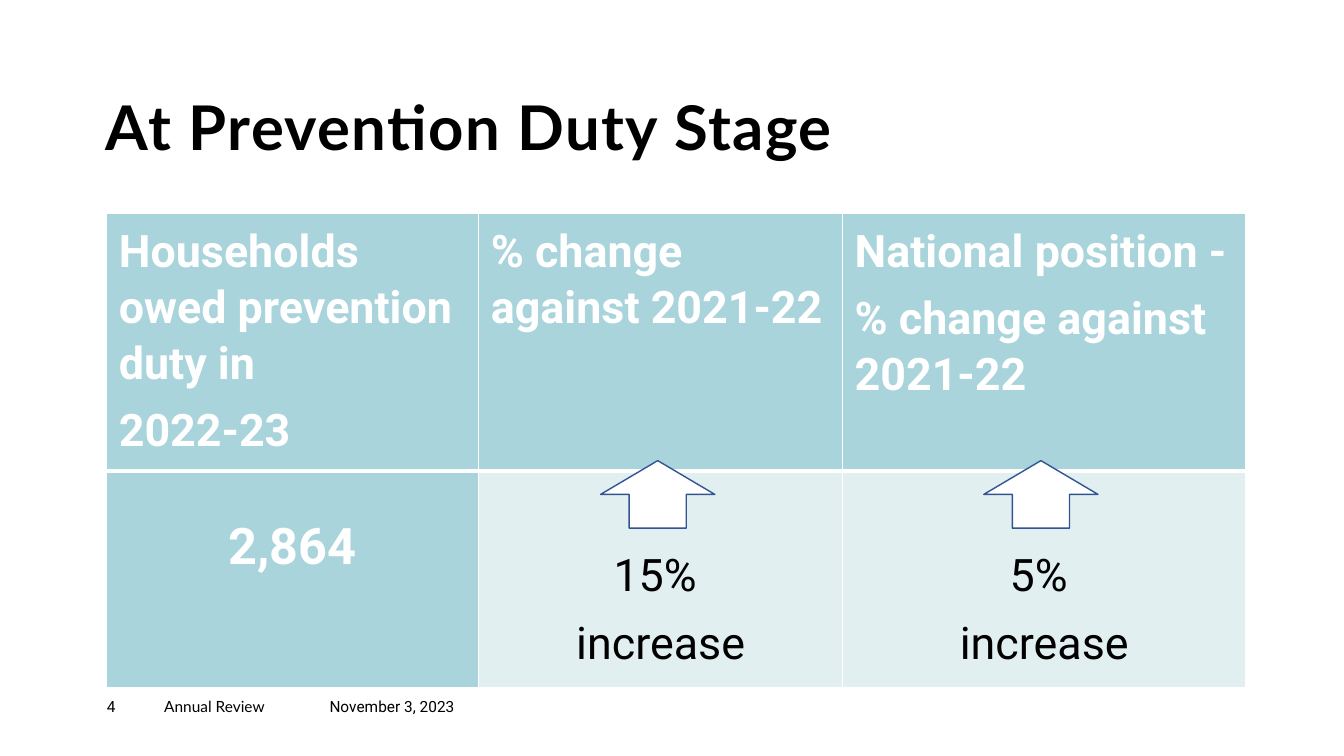
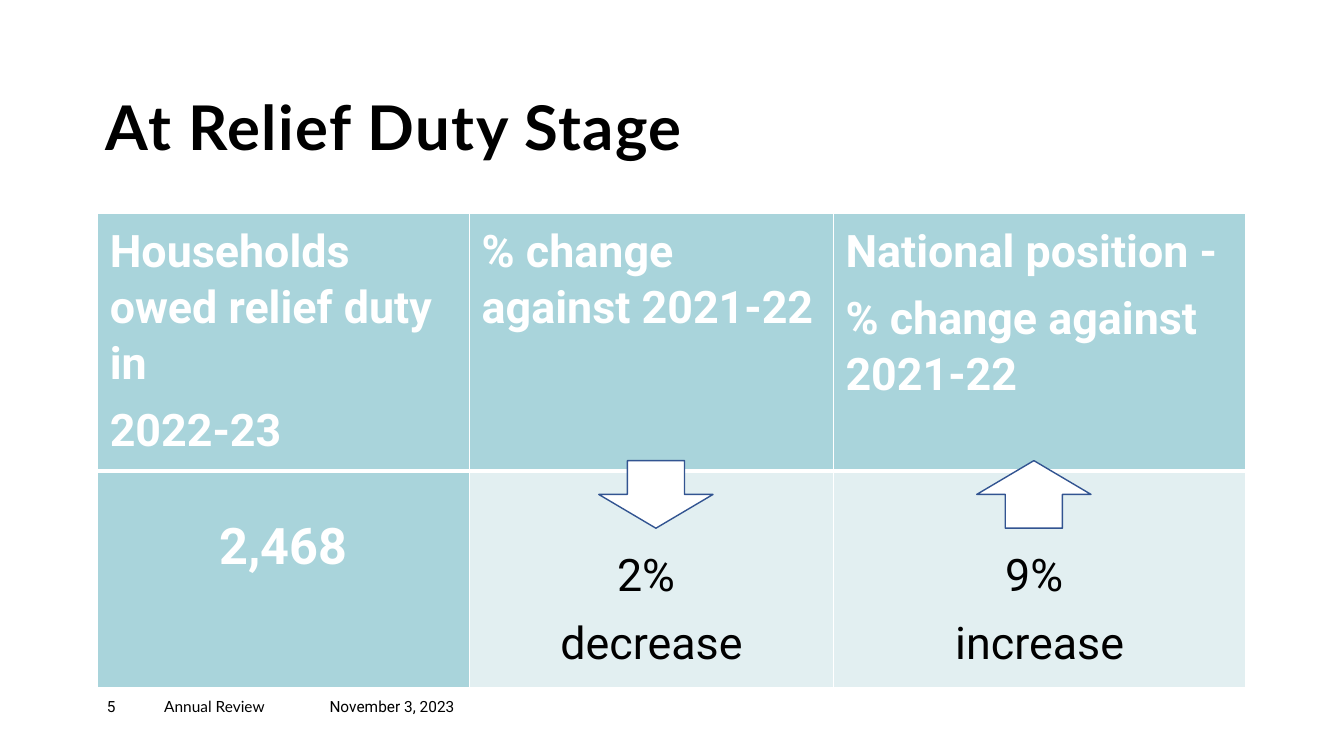
from lxml import etree
from pptx import Presentation
from pptx.dml.color import RGBColor
from pptx.enum.shapes import MSO_SHAPE
from pptx.enum.text import MSO_ANCHOR, MSO_AUTO_SIZE, PP_ALIGN
from pptx.oxml.ns import qn
from pptx.util import Pt

UP_ARROW = MSO_SHAPE.UP_ARROW
LEFT, CENTER = PP_ALIGN.LEFT, PP_ALIGN.CENTER
BOTTOM = MSO_ANCHOR.BOTTOM
NO_AUTOFIT = MSO_AUTO_SIZE.NONE

COLORS = {
    "text": "000000",
    "white": "FFFFFF",
    "header": "A9D4DB",
    "body": "E2EFF1",
    "arrow_line": "325491",
}
HEADING_FONT, BODY_FONT = "Lato", "Roboto"

TITLE_BOX = (75.6, 69.12, 636.48, 48.24)
FOOTER_TOP, FOOTER_HEIGHT = 498.24, 19.44
TABLE_TOP, TABLE_RIGHT = 152.64, 890
FIRST_WIDTHS = (265.7, 259.9)
ROW_HEIGHTS = (169.2, 154.8)
ARROW_TOP, ARROW_SIZE = 329.04, (81.6, 48.24)
MARGIN_X, MARGIN_Y = 8.64, 5.76
VALUE_MARGIN, CHANGE_MARGIN = 30.7, 54


def color(name):
    return RGBColor.from_string(COLORS[name])


def pts(values):
    return [Pt(v) for v in values]


def format_font(p, size, name, fill="text", bold=False):
    p.font.size = Pt(size)
    p.font.name = name
    p.font.bold = bold
    p.font.color.rgb = color(fill)


def clear_insets(tf):
    tf.margin_left = tf.margin_top = tf.margin_right = tf.margin_bottom = 0
    tf.word_wrap = True


def add_title(s, box, text):
    title = s.shapes.title
    title.left, title.top, title.width, title.height = pts(box)
    tf = title.text_frame
    clear_insets(tf)
    tf.auto_size = NO_AUTOFIT
    tf.vertical_anchor = BOTTOM
    p = tf.paragraphs[0]
    p.alignment = LEFT
    p.line_spacing = 0.9
    format_font(p, 44, HEADING_FONT, bold=True)
    r = p.add_run()
    r.text = text
    r._r.get_or_add_rPr().set("spc", "100")


def add_footer(s, left, top, number):
    parts = (
        (str(number), 41, BODY_FONT),
        ("Annual Review", 118.1, HEADING_FONT),
        ("November 3, 2023", 103.7, BODY_FONT),
    )
    for text, width, font in parts:
        tf = s.shapes.add_textbox(*pts((left, top, width, FOOTER_HEIGHT))).text_frame
        clear_insets(tf)
        p = tf.paragraphs[0]
        p.text = text
        format_font(p, 11, font)
        left += width


def set_borders(cell, top, bottom):
    tc_pr = cell._tc.get_or_add_tcPr()
    for side, width in (("L", 1), ("R", 1), ("T", top), ("B", bottom)):
        ln = etree.SubElement(tc_pr, qn(f"a:ln{side}"), w=str(Pt(width)))
        fill = etree.SubElement(ln, qn("a:solidFill"))
        etree.SubElement(fill, qn("a:srgbClr"), val=COLORS["white"])


def fill_cell(cell, lines, fill, size, font_color, bold, align, margin_top):
    cell.fill.solid()
    cell.fill.fore_color.rgb = color(fill)
    cell.margin_left = cell.margin_right = Pt(MARGIN_X)
    cell.margin_top, cell.margin_bottom = Pt(margin_top), Pt(MARGIN_Y)
    tf = cell.text_frame
    for i, line in enumerate(lines):
        p = tf.add_paragraph() if i else tf.paragraphs[0]
        p.text = line
        p.alignment = align
        p.line_spacing = 1.07
        p.space_after = Pt(8)
        format_font(p, size, BODY_FONT, font_color, bold)


def add_duty_table(s, left, top, duty, households, changes):
    widths = (*FIRST_WIDTHS, TABLE_RIGHT - left - sum(FIRST_WIDTHS))
    box = (left, top, sum(widths), sum(ROW_HEIGHTS))
    table = s.shapes.add_table(2, 3, *pts(box)).table
    table.horz_banding = False
    for col, width in zip(table.columns, widths):
        col.width = Pt(width)
    for row, height in zip(table.rows, ROW_HEIGHTS):
        row.height = Pt(height)

    headers = (
        (f"Households owed {duty} duty in", "2022-23"),
        ("% change against 2021-22",),
        ("National position -", "% change against 2021-22"),
    )
    for i, lines in enumerate(headers):
        set_borders(table.cell(0, i), 1, 3)
        set_borders(table.cell(1, i), 3, 1)
        fill_cell(table.cell(0, i), lines, "header", 32, "white", True, LEFT, MARGIN_Y)
    fill_cell(table.cell(1, 0), (households,), "header", 36, "white", True,
              CENTER, VALUE_MARGIN)
    for i, (percent, direction) in enumerate(changes, 1):
        fill_cell(table.cell(1, i), (f"{percent} ", direction), "body", 32, "text",
                  False, CENTER, CHANGE_MARGIN)


def add_arrow(s, left, top, direction):
    arrow = s.shapes.add_shape(UP_ARROW, *pts((left, top, *ARROW_SIZE)))
    arrow.rotation = 180 if direction == "decrease" else 0
    arrow.shadow.inherit = False
    arrow.fill.solid()
    arrow.fill.fore_color.rgb = color("white")
    arrow.line.color.rgb = color("arrow_line")
    arrow.line.width = Pt(1)


def add_duty_slide(prs, number, duty, households, changes, table_left, arrow_lefts):
    s = prs.slides.add_slide(prs.slide_layouts[5])
    add_title(s, TITLE_BOX, f"At {duty.capitalize()} Duty Stage")
    add_footer(s, 76.3, FOOTER_TOP, number)
    add_duty_table(s, table_left, TABLE_TOP, duty, households, changes)
    for left, (_, direction) in zip(arrow_lefts, changes):
        add_arrow(s, left, ARROW_TOP, direction)


def main():
    prs = Presentation()
    prs.slide_width, prs.slide_height = Pt(960), Pt(540)
    add_duty_slide(prs, 4, "prevention", "2,864",
                   (("15%", "increase"), ("5%", "increase")), 76.3, (429, 702.7))
    add_duty_slide(prs, 5, "relief", "2,468",
                   (("2%", "decrease"), ("9%", "increase")), 69.8, (427.7, 697.7))
    prs.save("out.pptx")


if __name__ == "__main__":
    main()
